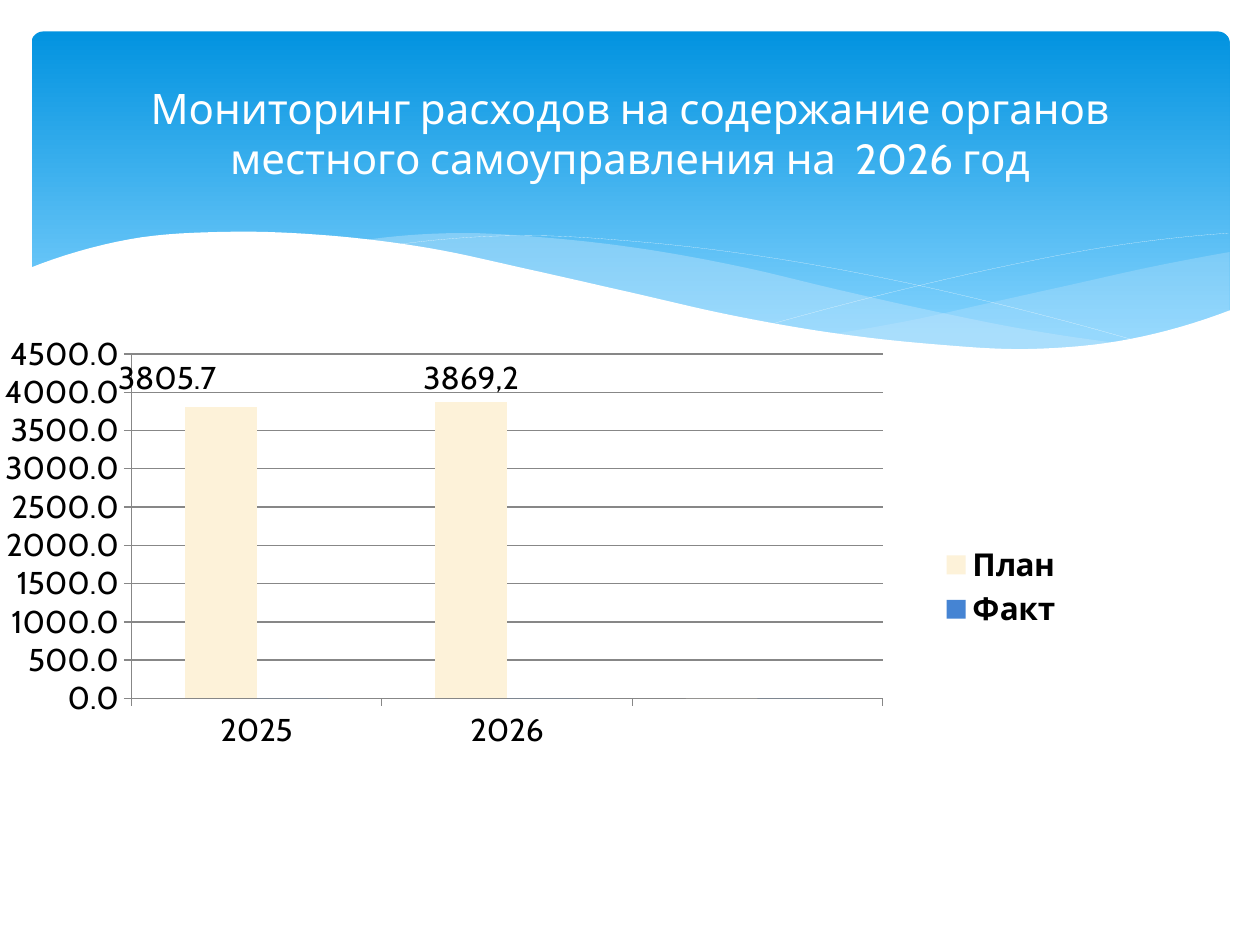
"""Build the slide on local government spending for 2026."""
from lxml.etree import SubElement
from pptx import Presentation
from pptx.chart.data import CategoryChartData
from pptx.dml.color import RGBColor
from pptx.enum.chart import XL_CHART_TYPE, XL_LABEL_POSITION, XL_LEGEND_POSITION, XL_TICK_MARK
from pptx.enum.shapes import MSO_SHAPE
from pptx.enum.text import MSO_ANCHOR, PP_ALIGN
from pptx.oxml import parse_xml
from pptx.oxml.ns import nsdecls, qn
from pptx.util import Inches, Pt

FONT = "Cabin"
WHITE, BLACK, GREY = "FFFFFF", "000000", "878787"
SKY, LIGHT_SKY, PALE_SKY = "0293E0", "83D3FE", "C6E7FC"
CREAM, BLUE = "FDF2D9", "4584D3"
SAMPLES_PER_STEP = 8


def paint(fill, color, alpha=None):
    fill.solid()
    fill.fore_color.rgb = RGBColor.from_string(color)
    if alpha is not None:
        tone = fill._xPr.find(qn("a:solidFill"))[0]
        SubElement(tone, qn("a:alpha")).set("val", str(alpha * 1000))


def write(frame, text, size=18, color=BLACK, align=PP_ALIGN.CENTER):
    paragraph = frame.paragraphs[0]
    paragraph.alignment = align
    run = paragraph.add_run()
    run.text = text
    run.font.name = FONT
    run.font.size = Pt(size)
    paint(run.font.fill, color)


deck = Presentation()
deck.slide_width, deck.slide_height = Inches(10), Inches(7.5)
slide = deck.slides.add_slide(deck.slide_layouts[6])
paint(slide.background.fill, WHITE)

banner = slide.shapes.add_shape(
    MSO_SHAPE.ROUNDED_RECTANGLE, Inches(0.25), Inches(0.25), Inches(9.51), Inches(2.7))
banner.adjustments[0] = 0.034
banner.shadow.inherit = False
banner.line.fill.background()
banner.fill.gradient()
banner.fill.gradient_angle = 270
for stop, color, position in zip(banner.fill.gradient_stops, (SKY, LIGHT_SKY), (0, 0.9)):
    stop.color.rgb = RGBColor.from_string(color)
    stop.position = position

right_crest = (2.65, 2.54, 2.4, 2.26, 2.12, 2)
right_trough = (2.65, 2.73, 2.77, 2.76, 2.67, 2.47)
middle_crest = (1.91, 1.85, 1.89, 1.98, 2.12, 2.3, 2.47, 2.62, 2.73)
middle_trough = (1.91, 2.03, 2.19, 2.37, 2.53, 2.66, 2.75, 2.78, 2.73)
falling_line = (1.95, 1.87, 1.92, 2.04, 2.22, 2.45, 2.72)
rising_line = (2.57, 2.33, 2.12, 1.95, 1.85)
white_crest = (2.13, 1.9, 1.84, 1.87, 1.97, 2.14, 2.32, 2.5, 2.64, 2.73, 2.77, 2.69, 2.46)
white_floor = (3.29, 3.29)

for left, right, edges, color, alpha in (
        (6.61, 9.76, (right_crest, right_trough), PALE_SKY, 29),
        (2.86, 8.93, (middle_crest, middle_trough), PALE_SKY, 40),
        (3.09, 9.07, (falling_line,), WHITE, None),
        (6.13, 9.75, (rising_line,), WHITE, None),
        (0.23, 9.77, (white_crest, white_floor), WHITE, None)):
    outline = []
    for heights in edges:
        steps = len(heights) - 1
        rises = [after - before for before, after in zip(heights, heights[1:])]
        slopes = [(before + after) / 2 for before, after in zip(rises, rises[1:])] or rises
        slopes = [2 * rises[0] - slopes[0], *slopes, 2 * rises[-1] - slopes[-1]]
        curve = []
        for sample in range(steps * SAMPLES_PER_STEP + 1):
            step = min(sample // SAMPLES_PER_STEP, steps - 1)
            t = sample / SAMPLES_PER_STEP - step
            y = (heights[step] + rises[step] * t * t * (3 - 2 * t)
                 + slopes[step] * t * (1 - t) ** 2 - slopes[step + 1] * t * t * (1 - t))
            x = left + (right - left) * (step + t) / steps
            curve.append((Inches(x), Inches(y)))
        outline += reversed(curve) if outline else curve

    closed = len(edges) == 2
    builder = slide.shapes.build_freeform(*outline[0])
    builder.add_line_segments(outline[1:], close=closed)
    wave = builder.convert_to_shape()
    wave.shadow.inherit = False
    if closed:
        paint(wave.fill, color, alpha)
        wave.line.fill.background()
    else:
        wave.fill.background()
        paint(wave.line.fill, color)
        wave.line.width = Pt(0.05)

spending = CategoryChartData(number_format="0.0")
spending.categories = ["2025", "2026", " "]
spending.add_series("План", (3805.7, 3869.2, 0))
spending.add_series("Факт", (0, 0, 0))
chart = slide.shapes.add_chart(
    XL_CHART_TYPE.COLUMN_CLUSTERED, Inches(0.02), Inches(2.65), Inches(8.52), Inches(4.02),
    spending).chart
chart.has_title = False
chart.font.name = FONT
chart.font.size = Pt(18)
paint(chart.font.fill, BLACK)
chart.has_legend = True
chart.legend.position = XL_LEGEND_POSITION.RIGHT
chart.legend.include_in_layout = False
chart.legend.font.bold = True
chart.legend.font.size = Pt(18)

amounts, years = chart.value_axis, chart.category_axis
amounts.minimum_scale, amounts.maximum_scale, amounts.major_unit = 0, 4500, 500
amounts.tick_labels.number_format = "0.0"
amounts.tick_labels.number_format_is_linked = False
for axis in (amounts, years):
    axis.major_tick_mark = XL_TICK_MARK.OUTSIDE
for rule in (amounts, years, amounts.major_gridlines):
    paint(rule.format.line.fill, GREY)
    rule.format.line.width = Pt(0.75)

columns = chart.plots[0]
columns.gap_width = 150
columns.overlap = 0
columns.vary_by_categories = False
for series, color in zip(columns.series, (CREAM, BLUE)):
    paint(series.format.fill, color)

plan = columns.series[0]
label_2025, label_2026 = (plan.points[i].data_label for i in range(2))
label_2025.font.size = Pt(18)
write(label_2026.text_frame, "3869,2")
for label in (label_2025, label_2026):
    label.position = XL_LABEL_POSITION.OUTSIDE_END

plan_labels = plan._element.find(qn("c:dLbls"))
plan_labels.append(parse_xml(
    f'<c:extLst {nsdecls("c")}><c:ext uri="{{CE6537A1-D6FC-4f65-9D91-7224C49458BB}}" '
    'xmlns:c15="http://schemas.microsoft.com/office/drawing/2012/chart">'
    '<c15:showLeaderLines val="0"/></c:ext></c:extLst>'))

columns_area = {"layoutTarget": "inner", "xMode": "edge", "yMode": "edge",
                "x": 0.12, "y": 0.04, "w": 0.7, "h": 0.68}
label_shift = {"x": -0.05, "y": -0.01}
for owner, index, settings in (
        (chart._chartSpace.chart.plotArea, 0, columns_area),
        (plan_labels.find(qn("c:dLbl")), 1, label_shift)):
    for previous in owner.findall(qn("c:layout")):
        owner.remove(previous)
    layout = parse_xml(f"<c:layout {nsdecls('c')}><c:manualLayout/></c:layout>")
    for tag, value in settings.items():
        SubElement(layout[0], qn(f"c:{tag}")).set("val", str(value))
    owner.insert(index, layout)

title = slide.shapes.add_textbox(Inches(0.5), Inches(0.37), Inches(9), Inches(1.37)).text_frame
title.word_wrap = True
title.vertical_anchor = MSO_ANCHOR.MIDDLE
write(title, "Мониторинг расходов на содержание органов местного самоуправления на  2026 год",
      size=24, color=WHITE)

deck.save("out.pptx")
